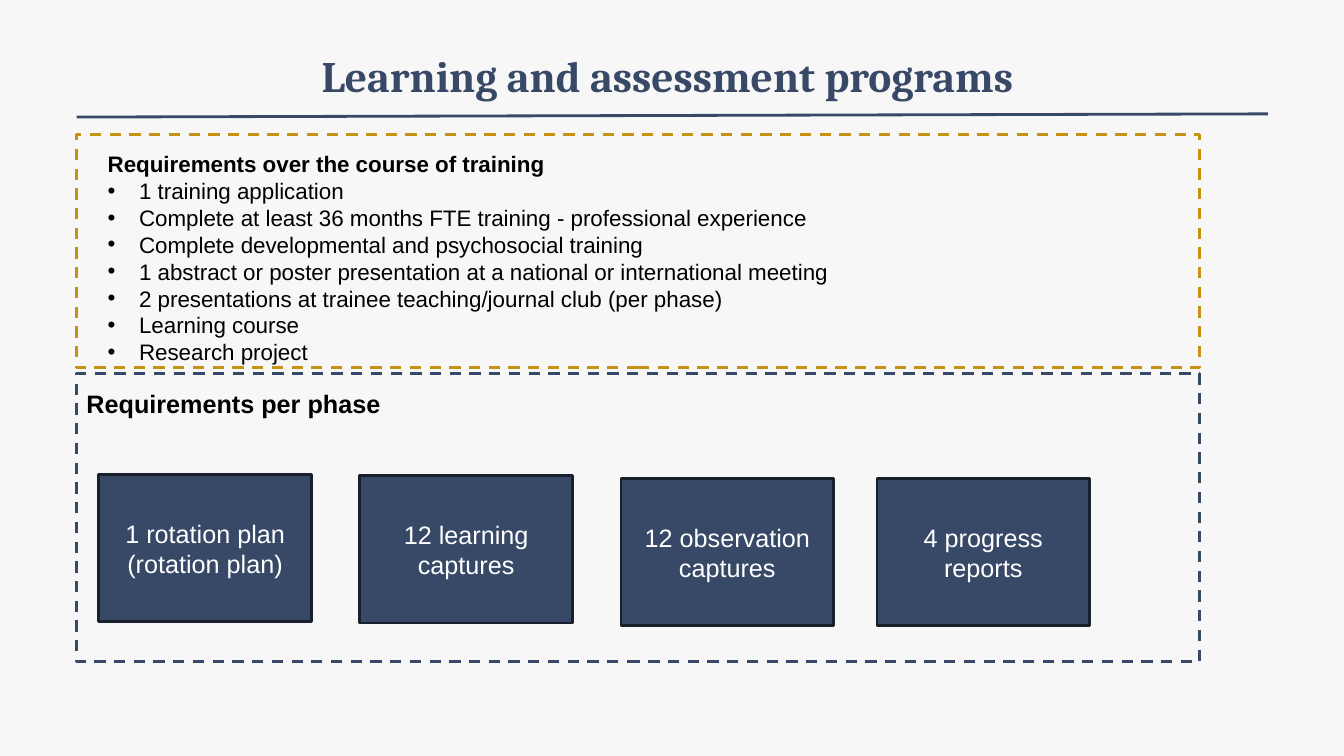
from dataclasses import dataclass

from lxml import etree
from pptx import Presentation
from pptx.dml.color import RGBColor
from pptx.enum.dml import MSO_LINE
from pptx.enum.shapes import MSO_CONNECTOR, MSO_SHAPE
from pptx.enum.text import MSO_ANCHOR, MSO_AUTO_SIZE, PP_ALIGN
from pptx.oxml.ns import qn
from pptx.util import Cm, Pt

RECTANGLE = MSO_SHAPE.RECTANGLE
STRAIGHT = MSO_CONNECTOR.STRAIGHT
DASH = MSO_LINE.DASH
MIDDLE, TOP = MSO_ANCHOR.MIDDLE, MSO_ANCHOR.TOP
CENTER, LEFT = PP_ALIGN.CENTER, PP_ALIGN.LEFT
FIXED = MSO_AUTO_SIZE.NONE


@dataclass(frozen=True)
class Theme:
    paper: RGBColor = RGBColor(0xF7, 0xF7, 0xF7)
    navy: RGBColor = RGBColor(0x38, 0x49, 0x67)
    edge: RGBColor = RGBColor(0x19, 0x20, 0x2D)
    gold: RGBColor = RGBColor(0xC6, 0x92, 0x14)
    black: RGBColor = RGBColor(0, 0, 0)
    white: RGBColor = RGBColor(0xFF, 0xFF, 0xFF)
    title_font: str = "Cambria"
    text_font: str = "Arial"
    title_size: int = 31
    list_size: int = 16
    label_size: int = 18
    line_width: int = 2
    indent: float = 0.79


THEME = Theme()

TRAINING_HEADING = "Requirements over the course of training"
TRAINING_ITEMS = (
    "1 training application",
    "Complete at least 36 months FTE training - professional experience",
    "Complete developmental and psychosocial training",
    "1 abstract or poster presentation at a national or international meeting",
    "2 presentations at trainee teaching/journal club (per phase)",
    "Learning course",
    "Research project",
)
# Label, with its card's offset from the phase panel in centimetres
PHASE_CARDS = (
    ("1 rotation plan (rotation plan)", 0.56, 2.54),
    ("12 learning captures", 7.14, 2.57),
    ("12 observation captures", 13.72, 2.64),
    ("4 progress reports", 20.17, 2.64),
)
CARD_SIZE = (5.36, 3.71)


def place(shape, left, top, width, height):
    shape.left, shape.top = Cm(left), Cm(top)
    shape.width, shape.height = Cm(width), Cm(height)


def prepare_frame(shape, anchor):
    frame = shape.text_frame
    frame.word_wrap = True
    frame.auto_size = FIXED
    frame.vertical_anchor = anchor
    return frame


def write(para, text, size, color, bold=False, font=THEME.text_font,
          align=LEFT):
    para.alignment = align
    para.line_spacing = 1.0
    para.space_before = para.space_after = Pt(0)
    span = para.add_run()
    span.text = text
    span.font.name = font
    span.font.size = Pt(size)
    span.font.bold = bold
    span.font.color.rgb = color


def set_bullet(para, char=None):
    properties = para._p.get_or_add_pPr()
    indent = Cm(THEME.indent) if char else 0
    properties.set("marL", str(indent))
    properties.set("indent", str(-indent))
    if char:
        font = etree.SubElement(properties, qn("a:buFont"))
        font.set("typeface", THEME.text_font)
        etree.SubElement(properties, qn("a:buChar")).set("char", char)
    else:
        etree.SubElement(properties, qn("a:buNone"))


def add_rectangle(page, box, line_color, fill_color=None):
    shape = page.shapes.add_shape(RECTANGLE, *(Cm(length) for length in box))
    shape.shadow.inherit = False
    shape.line.color.rgb = line_color
    shape.line.width = Pt(THEME.line_width)
    if fill_color is None:
        shape.fill.background()
        shape.line.dash_style = DASH
    else:
        shape.fill.solid()
        shape.fill.fore_color.rgb = fill_color
    return shape


# Title with the rule under it
def add_header(page, left, top, width, height):
    title = page.shapes.title
    place(title, left + 2.17, top, 25.43, height)
    para = prepare_frame(title, MIDDLE).paragraphs[0]
    write(para, "Learning and assessment programs", THEME.title_size,
          THEME.navy, True, THEME.title_font, CENTER)

    rule = page.shapes.add_connector(
        STRAIGHT, Cm(left), Cm(top + height - 0.1),
        Cm(left + width), Cm(top + height - 0.18))
    rule.line.color.rgb = THEME.navy
    rule.line.width = Pt(THEME.line_width)
    etree.SubElement(rule._element.spPr, qn("a:effectLst"))


# Gold panel with the list for the whole training
def add_training_panel(page, left, top, width, height):
    add_rectangle(page, (left, top, width, height), THEME.gold)
    body = page.placeholders[1]
    place(body, left + 0.53, top + 0.28, 24.99, height - 0.15)
    frame = prepare_frame(body, TOP)
    heading = frame.paragraphs[0]
    set_bullet(heading)
    write(heading, TRAINING_HEADING, THEME.list_size, THEME.black, True)
    for item in TRAINING_ITEMS:
        para = frame.add_paragraph()
        set_bullet(para, "•")
        write(para, item, THEME.list_size, THEME.black)


# Navy panel with one card for each requirement of a phase
def add_phase_panel(page, left, top, width, height):
    add_rectangle(page, (left, top, width, height), THEME.navy)
    heading = page.shapes.add_textbox(
        Cm(left), Cm(top + 0.23), Cm(16.94), Cm(1.02))
    write(prepare_frame(heading, TOP).paragraphs[0], "Requirements per phase",
          THEME.label_size, THEME.black, True)
    for label, across, down in PHASE_CARDS:
        card = add_rectangle(page, (left + across, top + down, *CARD_SIZE),
                             THEME.edge, THEME.navy)
        write(prepare_frame(card, MIDDLE).paragraphs[0], label,
              THEME.label_size, THEME.white, align=CENTER)


def main():
    deck = Presentation()
    deck.slide_width, deck.slide_height = Cm(33.87), Cm(19.05)
    page = deck.slides.add_slide(deck.slide_layouts[1])
    page.background.fill.solid()
    page.background.fill.fore_color.rgb = THEME.paper

    add_header(page, 1.93, 0.74, 30.02, 2.31)
    add_training_panel(page, 1.93, 3.38, 28.3, 5.89)
    add_phase_panel(page, 1.93, 9.42, 28.3, 7.26)
    deck.save("out.pptx")


if __name__ == "__main__":
    main()
